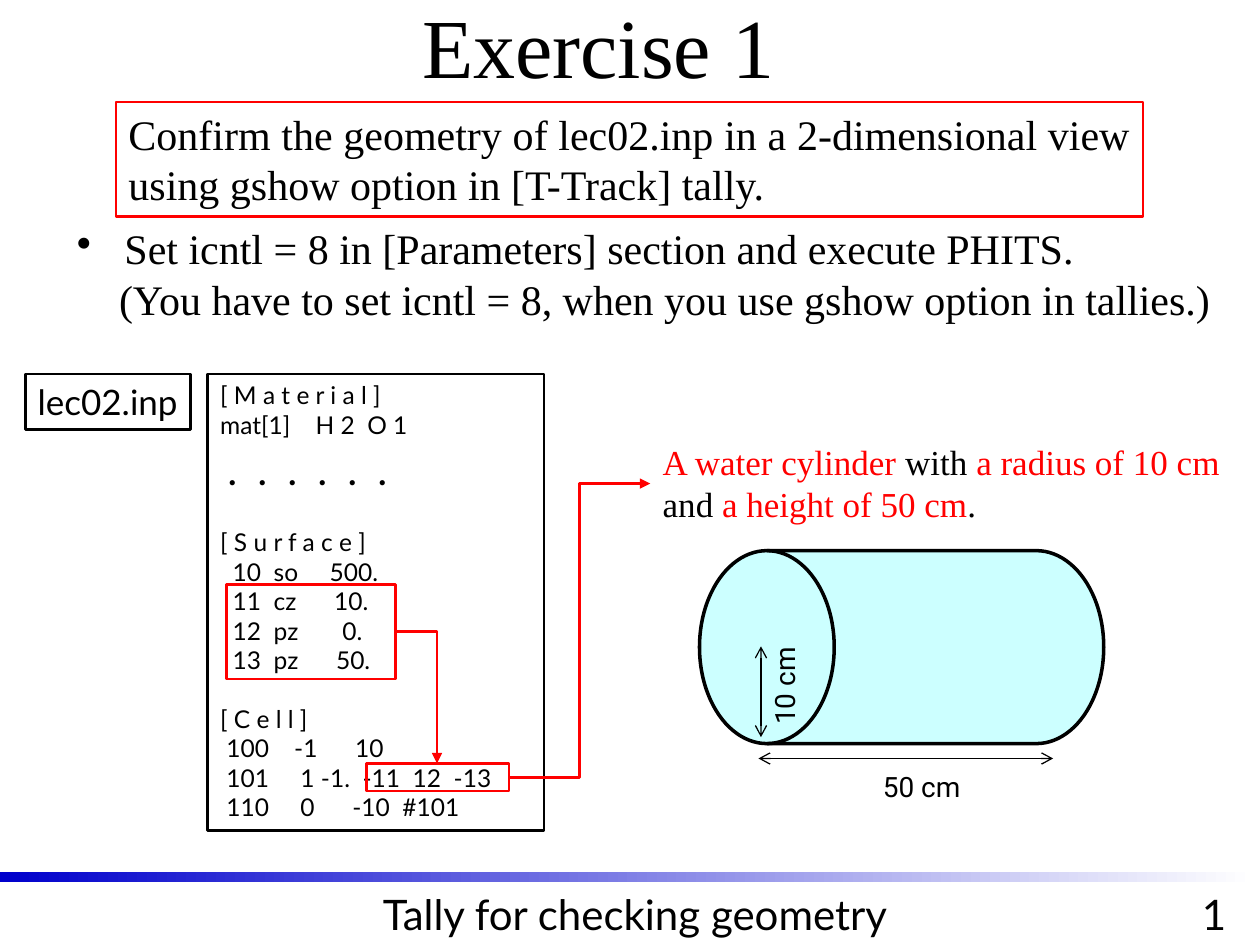
import pptx
import pptx.util
import pptx.dml.color
import pptx.enum.shapes
import pptx.enum.text
import pptx.oxml.ns
from lxml import etree

Cm, Pt = pptx.util.Cm, pptx.util.Pt
qn = pptx.oxml.ns.qn
SHAPE = pptx.enum.shapes.MSO_SHAPE
LINE = pptx.enum.shapes.MSO_CONNECTOR
ALIGN = pptx.enum.text.PP_ALIGN
ANCHOR = pptx.enum.text.MSO_ANCHOR

BLACK, RED, WHITE, BLUE, WATER = "000000", "FF0000", "FFFFFF", "0000CC", "CCFFFF"
SERIF, SANS, LABEL = "Times New Roman", "Lato", "Roboto"


def color(hex_text):
    return pptx.dml.color.RGBColor.from_string(hex_text)


class SlideBuilder:
    """Holds the current slide and draws styled elements on it."""

    def __init__(self, slide):
        self.slide = slide
        self.target = slide.shapes

    def start_group(self):
        self.target = self.slide.shapes.add_group_shape().shapes

    def end_group(self):
        self.target = self.slide.shapes

    def title(self, text, box, size):
        title = self.slide.shapes.title
        title.left, title.top, title.width, title.height = map(Cm, box)
        self.fill_text(title, [text], SERIF, size, align=ALIGN.CENTER, anchor=ANCHOR.MIDDLE)

    def shape(self, kind, box, fill=None, line=None, weight=1.5):
        shape = self.target.add_shape(kind, *map(Cm, box))
        shape.shadow.inherit = False
        if fill:
            shape.fill.solid()
            shape.fill.fore_color.rgb = color(fill)
        else:
            shape.fill.background()
        if line:
            shape.line.color.rgb = color(line)
            shape.line.width = Pt(weight)
        else:
            shape.line.fill.background()
        return shape

    def gradient_bar(self, box, start, end):
        bar = self.shape(SHAPE.RECTANGLE, box)
        bar.fill.gradient()
        bar.fill.gradient_angle = 0
        for stop, shade in zip(bar.fill.gradient_stops, (start, end)):
            stop.color.rgb = color(shade)

    def text(self, box, paragraphs, font, size, **style):
        textbox = self.target.add_textbox(*map(Cm, box))
        return self.fill_text(textbox, paragraphs, font, size, **style)

    def fill_text(self, shape, paragraphs, font, size, align=ALIGN.LEFT, anchor=ANCHOR.TOP,
                  wrap=True):
        """A paragraph is a string, or a list of (text, color) runs."""
        frame = shape.text_frame
        frame.word_wrap = wrap
        frame.vertical_anchor = anchor
        for i, content in enumerate(paragraphs):
            paragraph = frame.paragraphs[0] if i == 0 else frame.add_paragraph()
            paragraph.alignment = align
            paragraph.font.name = font
            paragraph.font.size = Pt(size)
            if isinstance(content, str):
                paragraph.add_run().text = content
                paragraph.font.color.rgb = color(BLACK)
            else:
                for words, shade in content:
                    run = paragraph.add_run()
                    run.text = words
                    run.font.color.rgb = color(shade)
        return shape

    def page_number(self, box, number):
        shape = self.text(box, [number], SANS, 24, align=ALIGN.CENTER)
        run = shape.text_frame.paragraphs[0].runs[0]._r
        run.tag = qn("a:fld")
        run.set("id", "{B6F15528-21DE-4FAA-801E-634DDDAF4B2B}")
        run.set("type", "slidenum")

    def arrow(self, start, end, shade, weight, tail, head=None, kind=LINE.STRAIGHT, preset=None):
        arrow = self.target.add_connector(kind, *map(Cm, start + end))
        arrow.line.color.rgb = color(shade)
        arrow.line.width = Pt(weight)
        properties = arrow._element.spPr
        outline = properties.find(qn("a:ln"))
        for tag, style in (("a:headEnd", head), ("a:tailEnd", tail)):
            if style:
                etree.SubElement(outline, qn(tag), type=style)
        etree.SubElement(properties, qn("a:effectLst"))
        if preset:
            properties.find(qn("a:prstGeom")).set("prst", preset)


def indent(paragraph, left, first=0, bullet=None):
    properties = paragraph._p.get_or_add_pPr()
    properties.set("marL", str(Cm(left)))
    properties.set("indent", str(Cm(first)))
    if bullet:
        properties.insert(0, etree.Element(qn("a:buChar"), char=bullet))


def main():
    deck = pptx.Presentation()
    deck.slide_width, deck.slide_height = Cm(25.4), Cm(19.05)
    page = SlideBuilder(deck.slides.add_slide(deck.slide_layouts[5]))

    # Title and footer
    page.gradient_bar((0, 17.58, 25.3, 0.2), BLUE, WHITE)
    page.page_number((23.47, 17.78, 2.01, 1.27), "9")
    page.title("Exercise 1", (0, -0.69, 24.13, 3.18), 48)
    page.text((4.9, 17.78, 15.8, 1.3), ["Tally for checking geometry"], SANS, 24, align=ALIGN.CENTER)

    # Input file listing, in blocks set one line apart
    blocks = [
        ["[ M a t e r i a l ]", "mat[1]    H 2  O 1"],
        ["・ ・ ・ ・ ・ ・"],
        ["[ S u r f a c e ]", "  10  so     500.", "  11  cz      10.",
         "  12  pz       0.", "  13  pz      50."],
        ["[ C e l l ]", " 100    -1      10", " 101     1 -1.  -11  12  -13",
         " 110     0      -10  #101"],
    ]
    listing = page.shape(SHAPE.RECTANGLE, (4.19, 7.54, 6.78, 9.2), WHITE, BLACK)
    page.fill_text(listing, sum(blocks, []), SANS, 14)
    block_start = 0
    for block in blocks[:-1]:
        block_start += len(block)
        listing.text_frame.paragraphs[block_start].space_before = Pt(16.8)

    file_name = page.shape(SHAPE.RECTANGLE, (0.51, 7.54, 3.33, 1.12), line=BLACK)
    page.fill_text(file_name, ["lec02.inp"], SANS, 20, wrap=False)

    # Marked surfaces and cell
    for mark in ((4.57, 11.79, 3.4, 1.9), (7.39, 15.39, 2.87, 0.56)):
        page.shape(SHAPE.RECTANGLE, mark, line=RED)

    # Cylinder
    page.text((13.11, 8.76, 11.81, 1.96), [[
        ("A water cylinder ", RED), ("with ", BLACK), ("a radius of 10 cm ", RED),
        ("and ", BLACK), ("a height of 50 cm", RED), (".", BLACK)]], SERIF, 20)
    page.start_group()
    cylinder = page.shape(SHAPE.FLOWCHART_DIRECT_ACCESS_STORAGE, (14.1, 11.1, 8.15, 3.89),
                          WATER, BLACK, 2)
    cylinder.rotation = 180
    for start, end in (((15.29, 15.29), (21.23, 15.29)), ((15.34, 14.86), (15.34, 13.03))):
        page.arrow(start, end, BLACK, 0.75, "arrow", "arrow")
    page.text((17.55, 15.39, 2.06, 0.94), ["50 cm"], LABEL, 16, wrap=False)
    radius = page.text((14.78, 13.36, 2.06, 0.94), ["10 cm"], LABEL, 16, wrap=False)
    radius.rotation = 270
    page.end_group()

    # Surfaces to cell, cell to cylinder
    page.arrow((7.95, 12.73), (8.81, 15.39), RED, 1.5, "triangle", kind=LINE.ELBOW,
               preset="bentConnector2")
    page.arrow((10.26, 15.67), (13.11, 9.75), RED, 1.5, "triangle", kind=LINE.ELBOW)

    # Instructions
    steps = page.text((1.3, 4.37, 23.67, 2.31), [
        "Set icntl = 8 in [Parameters] section and execute PHITS.",
        "(You have to set icntl = 8, when you use gshow option in tallies.)"], SERIF, 24)
    action, remark = steps.text_frame.paragraphs
    indent(action, 0.96, -0.96, "•")
    indent(remark, 0.85)

    task = page.shape(SHAPE.RECTANGLE, (2.34, 2.06, 20.7, 2.31), line=RED)
    page.fill_text(task, ["Confirm the geometry of lec02.inp in a 2-dimensional view "
                          "using gshow option in [T-Track] tally."], SERIF, 24,
                   align=ALIGN.JUSTIFY)

    deck.save("out.pptx")


if __name__ == "__main__":
    main()
